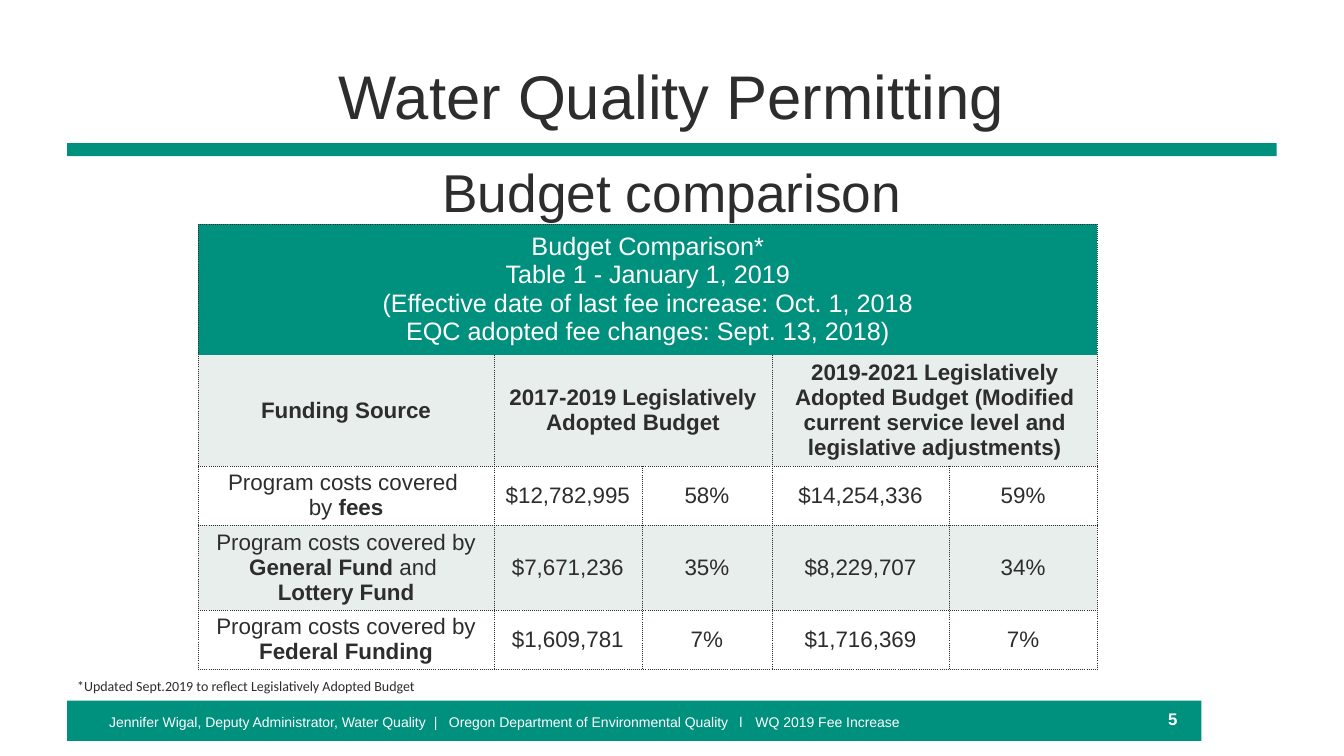
import lxml.etree
import pptx
import pptx.dml.color
import pptx.enum.shapes
import pptx.enum.text
import pptx.oxml.ns
import pptx.util

COLORS = {"teal": "00907E", "ink": "2D2D2D", "white": "FFFFFF", "mist": "E7EEEC"}
ALIGN = pptx.enum.text.PP_ALIGN
ANCHOR = pptx.enum.text.MSO_ANCHOR
Inches = pptx.util.Inches
qn = pptx.oxml.ns.qn

# Grid of 20 columns by 30 rows
SLIDE_WIDTH, SLIDE_HEIGHT = 13.33, 7.5
COLUMN, ROW = SLIDE_WIDTH / 20, SLIDE_HEIGHT / 30

BANNER = ["Budget Comparison*", "Table 1 - January 1, 2019",
          "(Effective date of last fee increase: Oct. 1, 2018",
          "EQC adopted fee changes: Sept. 13, 2018)"]
# Column heads by the table column where they start; spans of bold sit between asterisks
HEADS = {0: "*Funding Source*",
         1: "*2017-2019 Legislatively Adopted Budget*",
         3: "*2019-2021 Legislatively Adopted Budget (Modified current service level "
            "and legislative adjustments)*"}
FUNDING = [
    (["Program costs covered ", "by *fees*"], "$12,782,995", "58%", "$14,254,336", "59%"),
    (["Program costs covered by *General Fund *and ", "*Lottery Fund*"],
     "$7,671,236", "35%", "$8,229,707", "34%"),
    (["Program costs covered by *Federal Funding*"], "$1,609,781", "7%", "$1,716,369", "7%"),
]
COLUMN_WIDTHS = [4.4, 2.2, 1.94, 2.63, 2.21]
ROW_HEIGHTS = [5.2, 3.4, 2.32, 3.4, 2.32]


def rgb(name):
    return pptx.dml.color.RGBColor.from_string(COLORS[name])


def grid_box(left, top, width, height):
    return [Inches(left * COLUMN), Inches(top * ROW),
            Inches(width * COLUMN), Inches(height * ROW)]


def within(box, left, top, width, height):
    return grid_box(box[0] + left, box[1] + top, width, height)


def write(frame, paragraphs, size, color="ink", font="Arial", align=ALIGN.CENTER,
          bold=False, marked=False):
    """Fill a text frame; with marked, asterisks switch bold on and off."""
    frame.word_wrap = True
    for index, text in enumerate(paragraphs):
        para = frame.paragraphs[0] if index == 0 else frame.add_paragraph()
        para.alignment = align
        for part, piece in enumerate(text.split("*") if marked else [text]):
            if piece:
                span = para.add_run()
                span.text = piece
                span.font.name = font
                span.font.size = pptx.util.Pt(size)
                span.font.bold = bold or part % 2 == 1
                span.font.color.rgb = rgb(color)


def add_text(page, place, text, size, anchor=ANCHOR.MIDDLE, **style):
    frame = page.shapes.add_textbox(*place).text_frame
    frame.vertical_anchor = anchor
    write(frame, [text], size, **style)
    return frame


def add_bar(page, place):
    bar = page.shapes.add_shape(pptx.enum.shapes.MSO_SHAPE.RECTANGLE, *place)
    bar.shadow.inherit = False
    bar.fill.solid()
    bar.fill.fore_color.rgb = rgb("teal")
    bar.line.fill.background()


def set_borders(cell, hidden):
    """Dotted hairlines on every side but the hidden one."""
    properties = cell._tc.get_or_add_tcPr()
    for index, side in enumerate("LRTB"):
        line = lxml.etree.Element(qn(f"a:ln{side}"), w="3175")
        if side == hidden:
            lxml.etree.SubElement(line, qn("a:noFill"))
        else:
            fill = lxml.etree.SubElement(line, qn("a:solidFill"))
            lxml.etree.SubElement(fill, qn("a:srgbClr"), val=COLORS["ink"])
            lxml.etree.SubElement(line, qn("a:prstDash"), val="sysDot")
        properties.insert(index, line)


def add_heading(page, box):
    add_bar(page, within(box, 0, 4.36, 18, 0.52))
    title = page.shapes.title
    title.left, title.top, title.width, title.height = within(box, 0, 0, 18, 4.88)
    title.text_frame.vertical_anchor = ANCHOR.MIDDLE
    write(title.text_frame, ["Water Quality Permitting"], 44)
    add_text(page, within(box, 0, 4.8, 18, 2.8), "Budget comparison", 38, anchor=ANCHOR.TOP)


def add_budget_table(page, box):
    place = within(box, 0, 0, sum(COLUMN_WIDTHS), sum(ROW_HEIGHTS))
    table = page.shapes.add_table(len(ROW_HEIGHTS), len(COLUMN_WIDTHS), *place).table
    table.first_row = table.horz_banding = False
    for column, width in zip(table.columns, COLUMN_WIDTHS):
        column.width = Inches(width * COLUMN)
    for row, height in zip(table.rows, ROW_HEIGHTS):
        row.height = Inches(height * ROW)

    # Cell look: teal banner, then alternating rows
    for index, row in enumerate(table.rows):
        for cell in row.cells:
            cell.margin_left = cell.margin_right = Inches(0.02)
            cell.margin_top = cell.margin_bottom = Inches(0.02)
            cell.vertical_anchor = ANCHOR.MIDDLE
            cell.fill.solid()
            cell.fill.fore_color.rgb = rgb("teal" if index == 0 else
                                           "mist" if index % 2 else "white")
            set_borders(cell, {0: "B", 1: "T"}.get(index))

    # Banner and column heads
    table.cell(0, 0).merge(table.cell(0, 4))
    write(table.cell(0, 0).text_frame, BANNER, 18, color="white")
    for start, head in HEADS.items():
        if start:
            table.cell(1, start).merge(table.cell(1, start + 1))
        write(table.cell(1, start).text_frame, [head], 16, marked=True)

    # Funding sources
    for index, (source, *amounts) in enumerate(FUNDING, start=2):
        for column, lines in enumerate([source] + [[amount] for amount in amounts]):
            write(table.cell(index, column).text_frame, lines, 16, marked=True)


def add_footer(page, box):
    add_text(page, within(box, 0, 0, 9.25, 1.08),
             "*Updated Sept.2019 to reflect Legislatively Adopted Budget", 10,
             anchor=ANCHOR.TOP, font="Calibri", align=ALIGN.LEFT)
    add_bar(page, within(box, 0, 1.12, 16.88, 1.6))
    credit = add_text(page, within(box, 0.25, 1.32, 16.38, 1.32),
                      "Jennifer Wigal, Deputy Administrator, Water Quality\t|\t"
                      "Oregon Department of Environmental Quality\tl\tWQ 2019 Fee Increase",
                      10, color="white", align=ALIGN.LEFT)
    credit.margin_left = Inches(0.25)
    properties = credit.paragraphs[0]._p.get_or_add_pPr()
    tabs = lxml.etree.SubElement(properties, qn("a:tabLst"))
    for stop in (3.22, 3.37, 6.25, 6.41):
        lxml.etree.SubElement(tabs, qn("a:tab"), pos=str(Inches(stop)), algn="l")
    add_text(page, within(box, 12, 1.04, 4.67, 1.6), "5", 12, color="white",
             align=ALIGN.RIGHT, bold=True)


def main():
    deck = pptx.Presentation()
    deck.slide_width, deck.slide_height = Inches(SLIDE_WIDTH), Inches(SLIDE_HEIGHT)
    page = deck.slides.add_slide(deck.slide_layouts[5])
    add_heading(page, (1, 1.32))
    add_budget_table(page, (2.95, 8.88))
    add_footer(page, (1, 26.68))
    deck.save("out.pptx")


if __name__ == "__main__":
    main()
